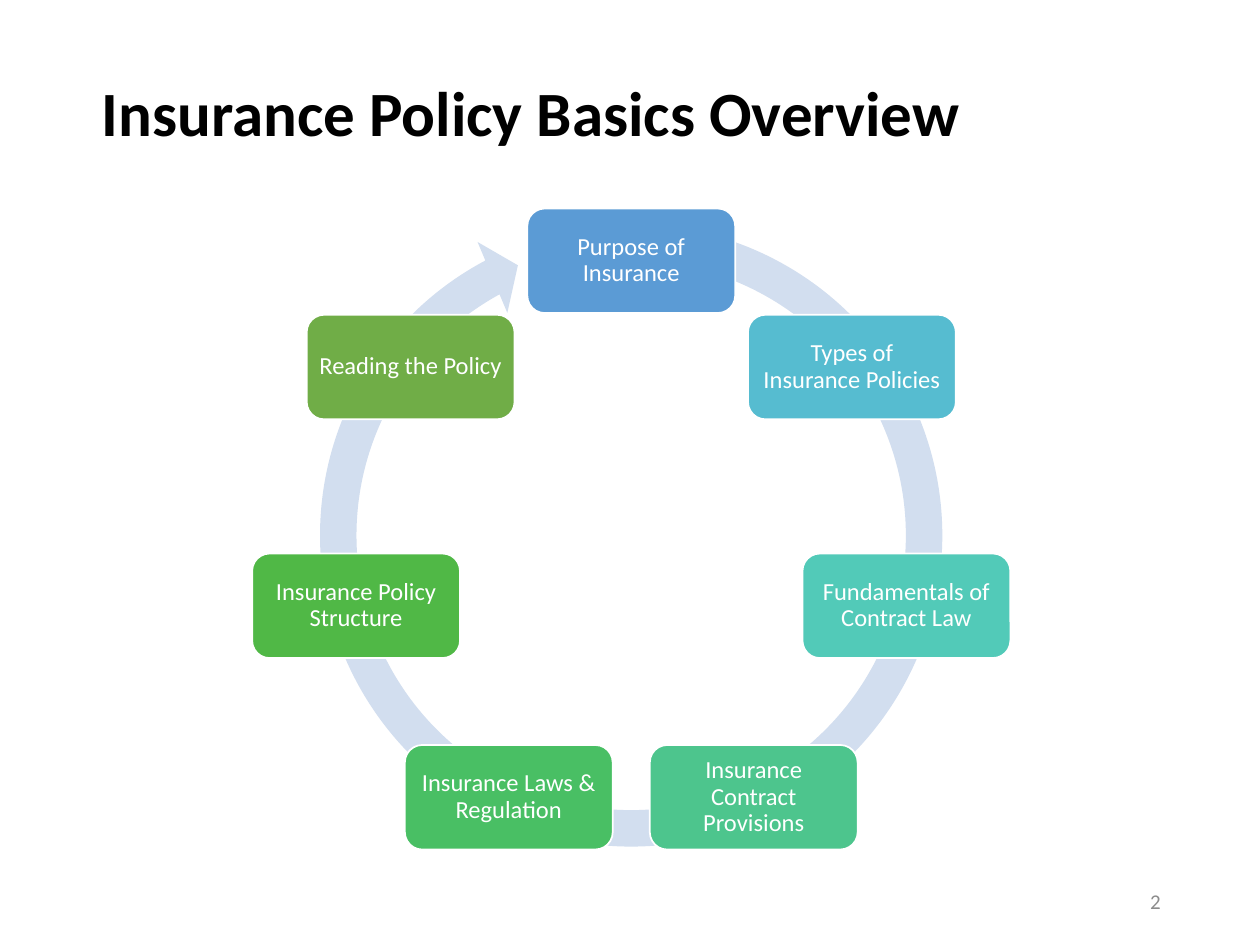
"""Build the insurance policy overview slide with its seven-step cycle."""
from dataclasses import dataclass
from math import cos, pi, sin

from pptx import Presentation
from pptx.dml.color import RGBColor
from pptx.enum.shapes import MSO_SHAPE as Shape
from pptx.enum.text import MSO_ANCHOR as Anchor, PP_ALIGN as Align
from pptx.util import Inches, Pt

TITLE = "Insurance Policy Basics Overview"
PAGE_NUMBER = "2"
STEPS = [
    ("Purpose of Insurance", "5B9BD5"),
    ("Types of Insurance Policies", "56BCD0"),
    ("Fundamentals of Contract Law", "52CAB8"),
    ("Insurance Contract Provisions", "4DC58D"),
    ("Insurance Laws & Regulation", "49BF64"),
    ("Insurance Policy Structure", "50B846"),
    ("Reading the Policy", "70AD47"),
]


@dataclass(frozen=True)
class Theme:
    font: str = "Calibri"
    title: str = "000000"
    light: str = "FFFFFF"
    number: str = "8C8C8C"
    ring: str = "D2DEEF"
    title_size: int = 36
    step_size: int = 14
    number_size: int = 12


THEME = Theme()
CENTER_X, CENTER_Y, RADIUS = 5.01, 4.31, 2.24
STEP_WIDTH, STEP_HEIGHT, STEP_INSET = 1.65, 0.83, 0.06
RING_SIZE, RING_TOP = 5.26, 1.62
RING_ADJUSTMENTS = (0.055, 3.307, 145.041, 169.569, 0.058)


def write(shape, text, size, color, align, bold=False, spacing=None):
    """Put one formatted paragraph in a shape."""
    frame = shape.text_frame
    frame.word_wrap = True
    frame.vertical_anchor = Anchor.MIDDLE
    para = frame.paragraphs[0]
    para.alignment = align
    para.line_spacing = spacing
    span = para.add_run()
    span.text = text
    span.font.name = THEME.font
    span.font.size = Pt(size)
    span.font.bold = bold
    span.font.color.rgb = RGBColor.from_string(color)


def add_filled(page, kind, left, top, width, height, color):
    """Add a flat preset shape without an outline."""
    shape = page.shapes.add_shape(kind, *map(Inches, (left, top, width, height)))
    shape.shadow.inherit = False
    shape.fill.solid()
    shape.fill.fore_color.rgb = RGBColor.from_string(color)
    shape.line.fill.background()
    return shape


def add_ring(page):
    """Add the circular arrow behind the steps."""
    ring = add_filled(page, Shape.CIRCULAR_ARROW, CENTER_X - RING_SIZE / 2,
                      RING_TOP, RING_SIZE, RING_SIZE, THEME.ring)
    for index, value in enumerate(RING_ADJUSTMENTS):
        ring.adjustments[index] = value


def add_step(page, index, text, color):
    """Add one step, placed clockwise from the top of the circle."""
    angle = 2 * pi * index / len(STEPS)
    left = CENTER_X + RADIUS * sin(angle) - STEP_WIDTH / 2
    top = CENTER_Y - RADIUS * cos(angle) - STEP_HEIGHT / 2
    box = add_filled(page, Shape.ROUNDED_RECTANGLE, left, top,
                     STEP_WIDTH, STEP_HEIGHT, color)
    box.line.color.rgb = RGBColor.from_string(THEME.light)
    box.line.width = Pt(1)
    frame = box.text_frame
    frame.margin_left = frame.margin_right = Inches(STEP_INSET)
    frame.margin_top = frame.margin_bottom = Inches(STEP_INSET)
    write(box, text, THEME.step_size, THEME.light, Align.CENTER, spacing=0.9)


def main():
    """Assemble and save the deck."""
    deck = Presentation()
    deck.slide_width, deck.slide_height = Inches(10), Inches(7.5)
    page = deck.slides.add_slide(deck.slide_layouts[6])
    title = page.shapes.add_textbox(*map(Inches, (0.71, 0.4, 8.62, 1.05)))
    write(title, TITLE, THEME.title_size, THEME.title, Align.LEFT, True, 0.9)
    add_ring(page)
    for index, (text, color) in enumerate(STEPS):
        add_step(page, index, text, color)
    number = page.shapes.add_textbox(*map(Inches, (7.06, 6.95, 2.25, 0.4)))
    write(number, PAGE_NUMBER, THEME.number_size, THEME.number, Align.RIGHT)
    deck.save("out.pptx")


if __name__ == "__main__":
    main()
